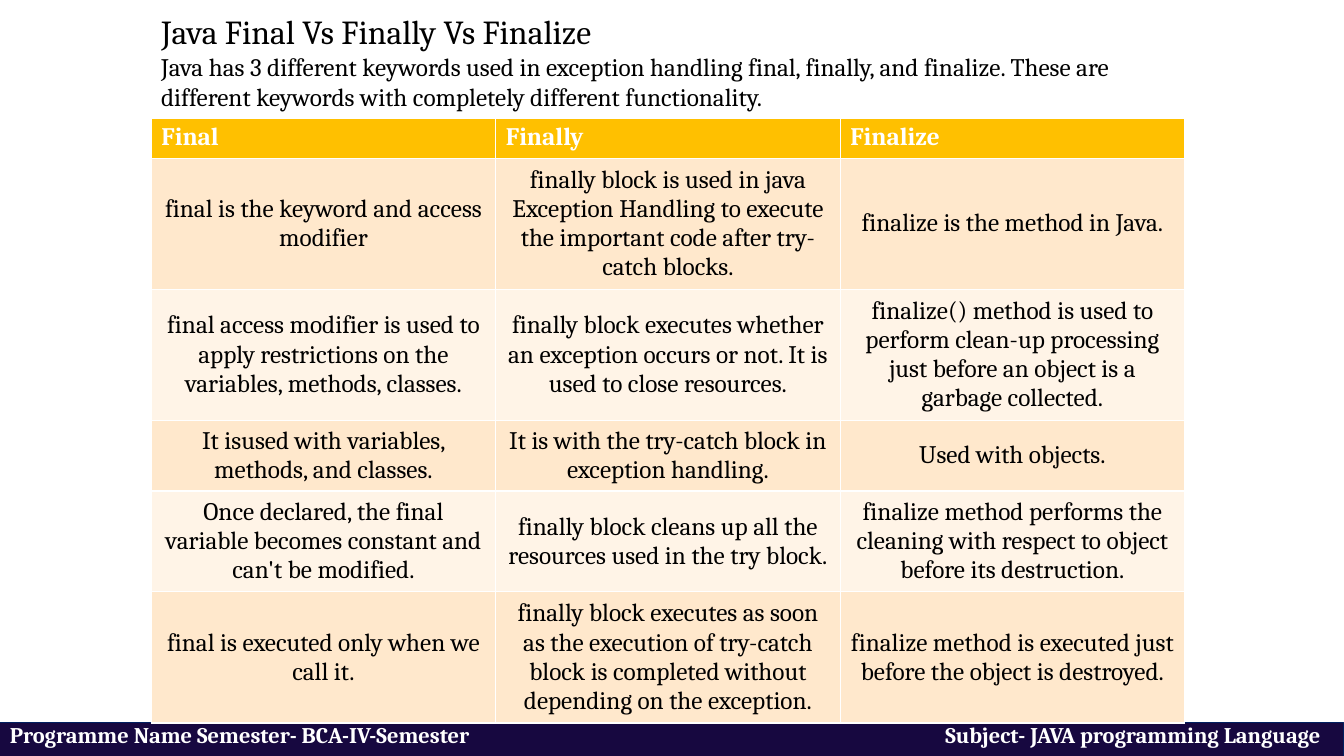
from lxml.etree import SubElement
from pptx import Presentation
from pptx.dml.color import RGBColor
from pptx.enum.shapes import MSO_SHAPE as Shape
from pptx.enum.text import MSO_ANCHOR as Anchor, PP_ALIGN as Align
from pptx.oxml.ns import qn
from pptx.util import Inches, Pt

ROWS = [
    ["Final", "Finally", "Finalize"],
    ["final is the keyword and access modifier",
     "finally block is used in java Exception Handling to execute the important code after try-catch blocks.",
     "finalize is the method in Java."],
    ["final access modifier is used to apply restrictions on the variables, methods, classes.",
     "finally block executes whether an exception occurs or not. It is used to close resources.",
     "finalize() method is used to perform clean-up processing just before an object is a garbage collected."],
    ["It isused with variables, methods, and classes.",
     "It is with the try-catch block in exception handling.",
     "Used with objects."],
    ["Once declared, the final variable becomes constant and can't be modified.",
     "finally block cleans up all the resources used in the try block.",
     "finalize method performs the cleaning with respect to object before its destruction."],
    ["final is executed only when we call it.",
     "finally block executes as soon as the execution of try-catch block is completed "
     "without depending on the exception.",
     "finalize method is executed just before the object is destroyed."],
]
LINES_PER_ROW = [1, 4, 4, 2, 3, 4]
BAND_FILLS = ["FFF4E7", "FFE8CC"]
HEADER_FORMAT = {"size": Pt(18), "bold": True, "color": "FFFFFF"}
BODY_FORMAT = {"size": Pt(18), "bold": False, "color": "000000"}


def color(hex_value):
    return RGBColor.from_string(hex_value)


def format_text(paragraph, text_format):
    paragraph.font.name = "Cambria"
    for name, value in text_format.items():
        if name == "color":
            paragraph.font.color.rgb = color(value)
        else:
            setattr(paragraph.font, name, value)


presentation = Presentation()
presentation.slide_width = Inches(13.33)
presentation.slide_height = Inches(7.5)
slide = presentation.slides.add_slide(presentation.slide_layouts[5])

# Footer bar: programme on the left, subject at a right-aligned tab
footer = slide.shapes.add_shape(Shape.RECTANGLE, 0, Inches(7.17), Inches(13.33), Inches(0.34))
footer.shadow.inherit = False
footer.fill.solid()
footer.fill.fore_color.rgb = color("170840")
footer.line.color.rgb = color("002060")
footer.line.width = Pt(0.75)
frame = footer.text_frame
frame.vertical_anchor = Anchor.MIDDLE
frame.margin_top, frame.margin_bottom = 0, Inches(0.1)
paragraph = frame.paragraphs[0]
paragraph.text = "Programme Name Semester- BCA-IV-Semester\tSubject- JAVA programming Language"
paragraph.alignment = Align.LEFT
tabs = SubElement(paragraph._p.get_or_add_pPr(), qn("a:tabLst"))
SubElement(tabs, qn("a:tab"), pos=str(Inches(13)), algn="r")
format_text(paragraph, {"size": Pt(16), "bold": True, "color": "FFFFFF"})

# Heading and introduction
title = slide.shapes.title
introduction = slide.shapes.add_textbox(Inches(1.5), Inches(0.46), Inches(9.9), Inches(0.71))
title.left, title.top, title.width, title.height = Inches(1.5), Inches(0.06), Inches(9.9), Inches(0.49)
heading_texts = [
    (title, "Java Final Vs Finally Vs Finalize", 24),
    (introduction, "Java has 3 different keywords used in exception handling final, finally, and finalize. "
                   "These are different keywords with completely different functionality.", 18),
]
for shape, text, size in heading_texts:
    frame = shape.text_frame
    frame.word_wrap = True
    frame.vertical_anchor = Anchor.TOP
    paragraph = frame.paragraphs[0]
    paragraph.text = text
    paragraph.alignment = Align.LEFT
    format_text(paragraph, {"size": Pt(size), "color": "000000"})

# Comparison table
table = slide.shapes.add_table(
    len(ROWS), len(ROWS[0]), Inches(1.5), Inches(1.17), Inches(10.25), Inches(6)).table
for row_index, (texts, lines) in enumerate(zip(ROWS, LINES_PER_ROW)):
    is_header = row_index == 0
    table.rows[row_index].height = Inches(0.1 + 0.3 * lines)
    for column_index, text in enumerate(texts):
        cell = table.cell(row_index, column_index)
        cell.fill.solid()
        cell.fill.fore_color.rgb = color("FFC000" if is_header else BAND_FILLS[row_index % 2])
        cell.vertical_anchor = Anchor.TOP if is_header else Anchor.MIDDLE
        cell.text = text
        paragraph = cell.text_frame.paragraphs[0]
        paragraph.alignment = Align.LEFT if is_header else Align.CENTER
        format_text(paragraph, HEADER_FORMAT if is_header else BODY_FORMAT)

presentation.save("out.pptx")
